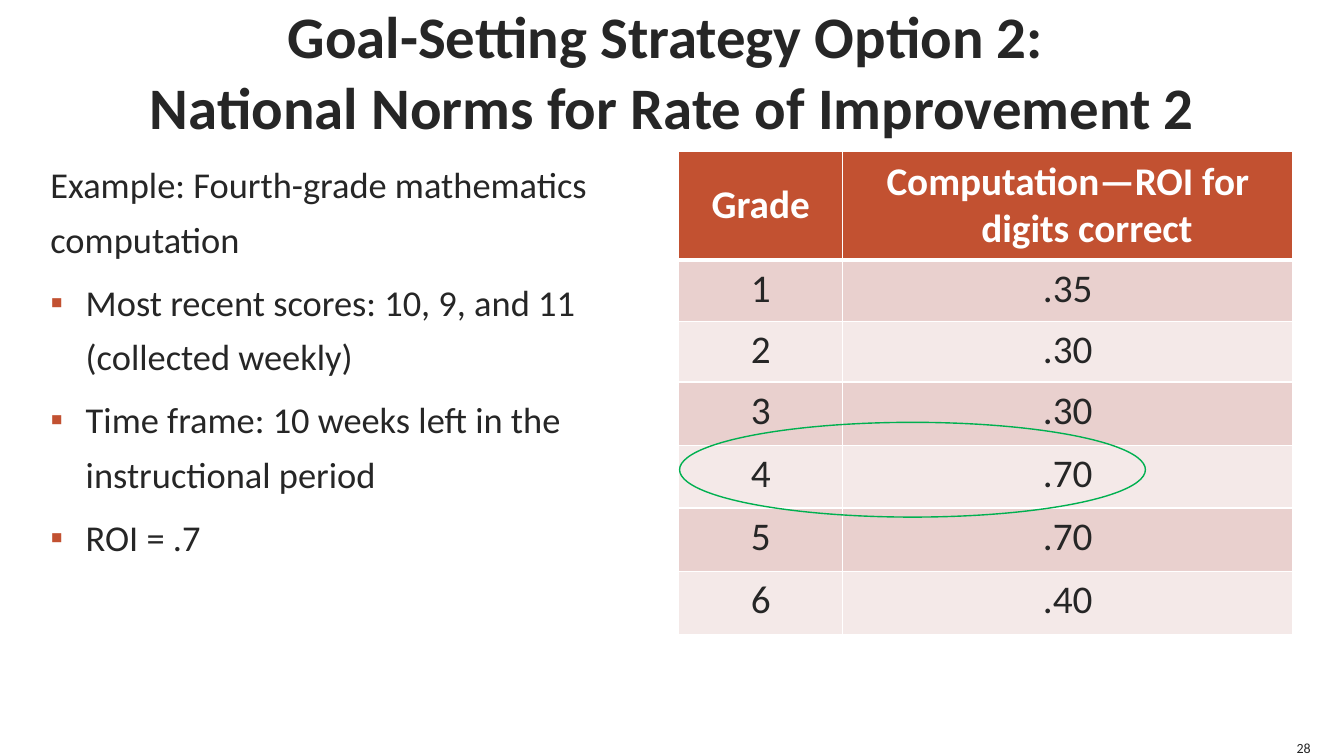
import pptx
import pptx.dml.color
import pptx.enum.shapes
import pptx.enum.text
import pptx.oxml
import pptx.oxml.ns
import pptx.util
from pptx.util import Inches

RGBColor = pptx.dml.color.RGBColor
ALIGN = pptx.enum.text.PP_ALIGN
ANCHOR = pptx.enum.text.MSO_ANCHOR

INK = RGBColor(0x26, 0x26, 0x26)
RUST = RGBColor(0xC2, 0x51, 0x31)
ROSE = RGBColor(0xE9, 0xD0, 0xCE)
BLUSH = RGBColor(0xF4, 0xE9, 0xE8)
GREEN = RGBColor(0x00, 0xB0, 0x50)
WHITE = RGBColor(0xFF, 0xFF, 0xFF)
FONT = "Calibri"

TITLE_LINES = ["Goal-Setting Strategy Option 2: ", "National Norms for Rate of Improvement 2"]
EXAMPLE = "Example: Fourth-grade mathematics computation"
EXAMPLE_FACTS = [
    "Most recent scores: 10, 9, and 11 (collected weekly)",
    "Time frame: 10 weeks left in the instructional period",
    "ROI = .7",
]
ROI_ROWS = [
    ("Grade", "Computation—ROI for digits correct"),
    ("1", ".35"), ("2", ".30"), ("3", ".30"),
    ("4", ".70"), ("5", ".70"), ("6", ".40"),
]
GRADE_WIDTH = 1.63
ROW_HEIGHTS = [1.08, 0.61, 0.6, 0.63, 0.62, 0.63, 0.63]


def add_run(paragraph, text, size, color=INK, bold=False):
    run = paragraph.add_run()
    run.text = text
    run.font.name = FONT
    run.font.size = pptx.util.Pt(size)
    run.font.bold = bold
    run.font.color.rgb = color


def clear_insets(frame):
    frame.margin_left = frame.margin_top = frame.margin_right = frame.margin_bottom = 0


def append_xml(parent, tag, attributes, content=""):
    namespace = pptx.oxml.ns.nsdecls("a")
    parent.append(pptx.oxml.parse_xml(f"<a:{tag} {namespace} {attributes}>{content}</a:{tag}>"))


def set_hanging_indent(paragraph, inches):
    properties = paragraph._p.get_or_add_pPr()
    properties.set("marL", str(Inches(inches)))
    properties.set("indent", str(-Inches(inches)))
    return properties


def place_title(slide, left, top, width, height):
    title = slide.shapes.title
    title.left, title.top = Inches(left), Inches(top)
    title.width, title.height = Inches(width), Inches(height)
    frame = title.text_frame
    clear_insets(frame)
    frame.word_wrap = True
    frame.auto_size = pptx.enum.text.MSO_AUTO_SIZE.NONE
    frame.vertical_anchor = ANCHOR.MIDDLE
    paragraph = frame.paragraphs[0]
    paragraph.alignment = ALIGN.CENTER
    for index, line in enumerate(TITLE_LINES):
        if index:
            paragraph.add_line_break()
        add_run(paragraph, line, 42, bold=True)


def add_example(slide, left, top, width, height):
    box = slide.shapes.add_textbox(Inches(left), Inches(top), Inches(width), Inches(height))
    frame = box.text_frame
    clear_insets(frame)
    frame.word_wrap = True
    intro = frame.paragraphs[0]
    intro.line_spacing = 1.25
    add_run(intro, EXAMPLE, 26)
    for fact in EXAMPLE_FACTS:
        bullet = frame.add_paragraph()
        properties = set_hanging_indent(bullet, 0.35)
        append_xml(properties, "buClr", "", f'<a:srgbClr val="{RUST}"/>')
        append_xml(properties, "buFont", 'typeface="Arial"')
        append_xml(properties, "buChar", 'char="▪"')
        bullet.line_spacing = 1.25
        bullet.space_before = pptx.util.Pt(6)
        add_run(bullet, fact, 26)


def set_borders(cell, row):
    """Rule the cell in white, with a heavier line under the header row."""
    points = {"lnL": 1, "lnR": 1, "lnT": 3 if row == 1 else 1, "lnB": 3 if row == 0 else 1}
    for side, width in points.items():
        append_xml(cell._tc.get_or_add_tcPr(), side, f'w="{pptx.util.Pt(width)}"',
                   f'<a:solidFill><a:srgbClr val="{WHITE}"/></a:solidFill>')


def add_roi_table(slide, left, top, width):
    frame = slide.shapes.add_table(len(ROI_ROWS), 2, Inches(left), Inches(top),
                                   Inches(width), Inches(sum(ROW_HEIGHTS)))
    table = frame.table
    table.columns[0].width = Inches(GRADE_WIDTH)
    table.columns[1].width = Inches(width - GRADE_WIDTH)
    for row, (values, row_height) in enumerate(zip(ROI_ROWS, ROW_HEIGHTS)):
        table.rows[row].height = Inches(row_height)
        header = row == 0
        for column, value in enumerate(values):
            cell = table.cell(row, column)
            cell.margin_left = cell.margin_right = Inches(0.11)
            cell.margin_top = cell.margin_bottom = Inches(0.05)
            cell.vertical_anchor = ANCHOR.MIDDLE if header else ANCHOR.TOP
            set_borders(cell, row)
            cell.fill.solid()
            cell.fill.fore_color.rgb = RUST if header else (BLUSH, ROSE)[row % 2]
            paragraph = cell.text_frame.paragraphs[0]
            set_hanging_indent(paragraph, 0.38)
            paragraph.alignment = ALIGN.CENTER
            add_run(paragraph, value, 28, WHITE if header else INK, header)


def circle_fourth_grade(slide, left, top, width, height):
    ring = slide.shapes.add_shape(pptx.enum.shapes.MSO_SHAPE.OVAL, Inches(left), Inches(top),
                                  Inches(width), Inches(height))
    ring.shadow.inherit = False
    ring.fill.background()
    ring.line.color.rgb = GREEN
    ring.line.width = pptx.util.Pt(1)


def add_page_number(slide, left, top, width, height):
    box = slide.shapes.add_textbox(Inches(left), Inches(top), Inches(width), Inches(height))
    frame = box.text_frame
    clear_insets(frame)
    frame.word_wrap = False
    frame.vertical_anchor = ANCHOR.BOTTOM
    frame.paragraphs[0].alignment = ALIGN.RIGHT
    add_run(frame.paragraphs[0], "28", 10)


def main():
    deck = pptx.Presentation()
    deck.slide_width, deck.slide_height = Inches(13.33), Inches(7.5)
    slide = deck.slides.add_slide(deck.slide_layouts[5])
    place_title(slide, 0.5, 0, 12.33, 1.4)
    add_example(slide, 0.5, 1.5, 6.09, 4.75)
    add_roi_table(slide, 6.73, 1.5, 6.09)
    circle_fourth_grade(slide, 6.74, 4.19, 4.62, 0.94)
    add_page_number(slide, 12.83, 7.33, 0.17, 0.17)
    deck.save("out.pptx")


if __name__ == "__main__":
    main()
